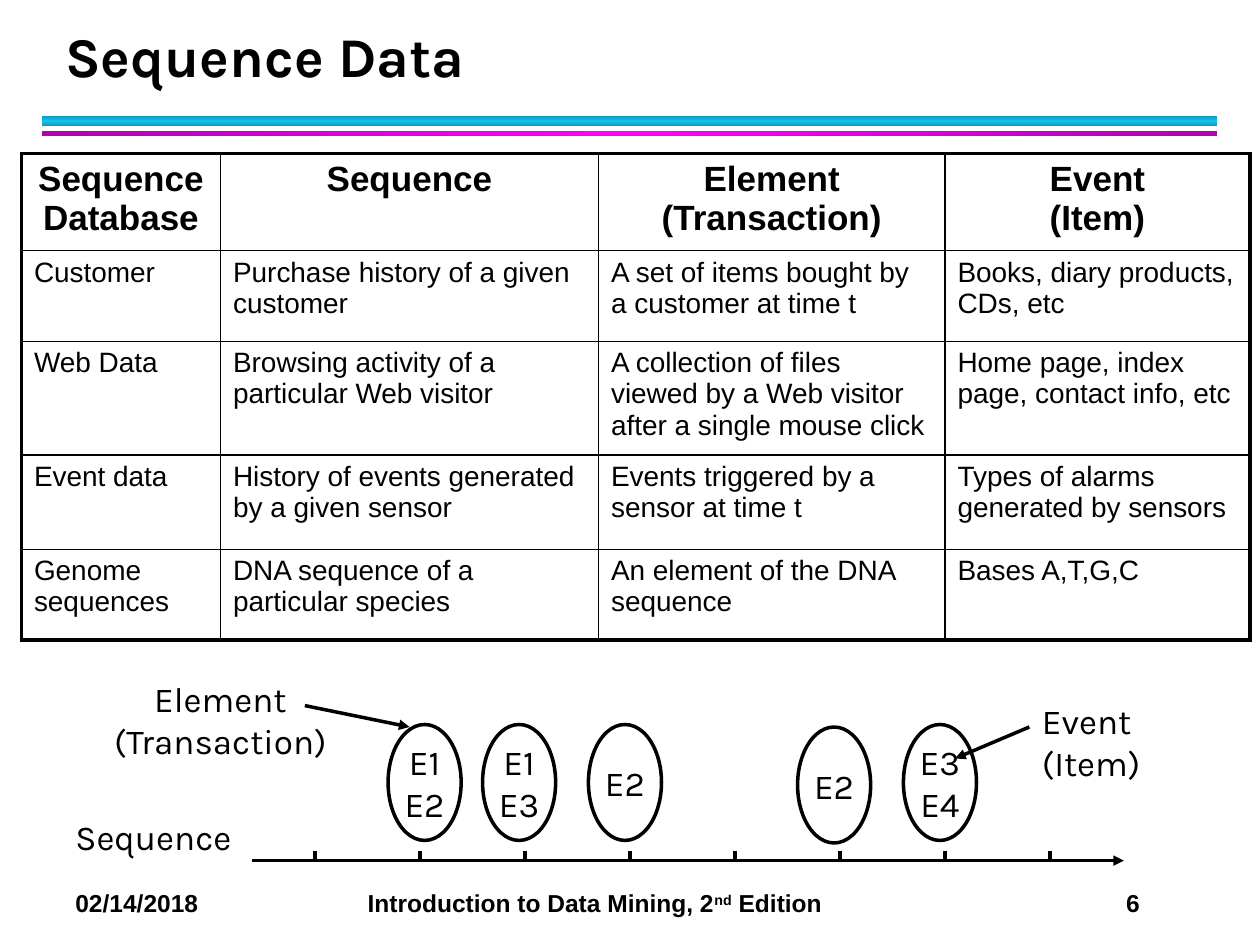
from copy import deepcopy

from lxml.etree import SubElement
from pptx import Presentation
from pptx.dml.color import RGBColor
from pptx.enum.shapes import MSO_CONNECTOR, MSO_SHAPE
from pptx.enum.text import MSO_ANCHOR, PP_ALIGN
from pptx.oxml.ns import qn
from pptx.util import Inches, Pt

BLACK = RGBColor(0x00, 0x00, 0x00)
DARK_CYAN = RGBColor(0x0E, 0x9B, 0xBA)
CYAN = RGBColor(0x12, 0xC2, 0xE9)
PURPLE = RGBColor(0xB2, 0x00, 0xB2)
MAGENTA = RGBColor(0xFF, 0x00, 0xFF)

COLUMN_WIDTHS = [1.58, 3, 2.75, 2.42]
ROW_HEIGHTS = [0.77, 0.72, 0.9, 0.75, 0.72]
TABLE_ROWS = [
    ["Sequence Database", "Sequence", "Element (Transaction)", "Event\n(Item)"],
    ["Customer", "Purchase history of a given customer",
     "A set of items bought by a customer at time t",
     "Books, diary products, CDs, etc"],
    ["Web Data", "Browsing activity of a particular Web visitor",
     "A collection of files viewed by a Web visitor after a single mouse click",
     "Home page, index page, contact info, etc"],
    ["Event data", "History of events generated by a given sensor",
     "Events triggered by a sensor at time t",
     "Types of alarms generated by sensors"],
    ["Genome sequences", "DNA sequence of a particular species",
     "An element of the DNA sequence", "Bases A,T,G,C"],
]
ELEMENTS = [
    (3.08, 5.75, "E1\nE2"),
    (3.83, 5.75, "E1\nE3"),
    (4.67, 5.75, "E2"),
    (7.17, 5.75, "E3\nE4"),
    (6.33, 5.77, "E2"),
]


def write_text(para, text, *, size=20, font="Karla", bold=False,
               align=PP_ALIGN.LEFT, baseline=0):
    para.alignment = align
    for index, line in enumerate(text.split("\n")):
        if index:
            para.add_line_break()
        span = para.add_run()
        span.text = line
        span.font.size = Pt(size)
        span.font.name = font
        span.font.bold = bold
        span.font.color.rgb = BLACK
        if baseline:
            span.font._element.set("baseline", str(baseline * 1000))


class SlideBuilder:
    line_width = 2
    outer_border = 2.25
    inner_border = 1

    def __init__(self, page):
        self.page = page

    def text_box(self, left, top, width, height, text="", **style):
        box = self.page.shapes.add_textbox(
            Inches(left), Inches(top), Inches(width), Inches(height))
        box.text_frame.word_wrap = True
        para = box.text_frame.paragraphs[0]
        if text:
            write_text(para, text, **style)
        return box.text_frame, para

    def bar(self, top, height, edge, middle, angle):
        bar = self.page.shapes.add_shape(
            MSO_SHAPE.RECTANGLE, Inches(0.33), Inches(top), Inches(9.33), Inches(height))
        bar.shadow.inherit = False
        bar.line.fill.background()
        bar.fill.gradient()
        bar.fill.gradient_angle = angle
        stop_list = bar._element.spPr.find(qn("a:gradFill")).find(qn("a:gsLst"))
        stop_list.append(deepcopy(stop_list[-1]))
        for stop, position, color in zip(
                bar.fill.gradient_stops, (0, 0.5, 1), (edge, middle, edge)):
            stop.position = position
            stop.color.rgb = color

    def line(self, start, end, arrow=False):
        points = [Inches(value) for value in (*start, *end)]
        line = self.page.shapes.add_connector(MSO_CONNECTOR.STRAIGHT, *points)
        line.line.color.rgb = BLACK
        line.line.width = Pt(self.line_width)
        if arrow:
            SubElement(line.line._get_or_add_ln(), qn("a:tailEnd"), type="triangle")
        SubElement(line._element.spPr, qn("a:effectLst"))

    def ellipse(self, left, top, text):
        oval = self.page.shapes.add_shape(
            MSO_SHAPE.OVAL, Inches(left), Inches(top), Inches(0.58), Inches(0.92))
        oval.shadow.inherit = False
        oval.fill.background()
        oval.line.color.rgb = BLACK
        oval.line.width = Pt(self.line_width)
        oval.text_frame.word_wrap = False
        oval.text_frame.vertical_anchor = MSO_ANCHOR.MIDDLE
        write_text(oval.text_frame.paragraphs[0], text, align=PP_ALIGN.CENTER)

    def border(self, cell, side, width):
        edge = SubElement(cell._tc.get_or_add_tcPr(), qn(f"a:ln{side}"), w=str(Pt(width)))
        SubElement(SubElement(edge, qn("a:solidFill")), qn("a:srgbClr"), val=str(BLACK))

    def table(self, left, top, rows, widths, heights):
        table = self.page.shapes.add_table(
            len(rows), len(widths), Inches(left), Inches(top),
            Inches(sum(widths)), Inches(sum(heights))).table
        table.first_row = False
        table.horz_banding = False
        for column, width in zip(table.columns, widths):
            column.width = Inches(width)
        for row, height in zip(table.rows, heights):
            row.height = Inches(height)
        for row_index, row in enumerate(rows):
            for column_index, text in enumerate(row):
                cell = table.cell(row_index, column_index)
                header = row_index == 0
                outer_sides = {
                    "L": column_index == 0,
                    "R": column_index == len(widths) - 1,
                    "T": header,
                    "B": row_index == len(rows) - 1,
                }
                for side, outer in outer_sides.items():
                    self.border(cell, side, self.outer_border if outer else self.inner_border)
                cell.fill.background()
                para = cell.text_frame.paragraphs[0]
                para.space_after = Pt(4)
                write_text(para, text, size=20 if header else 16, font="Arial", bold=header,
                           align=PP_ALIGN.CENTER if header else PP_ALIGN.LEFT)

    def footer(self, date, title, number):
        para = self.text_box(0.5, 7, 9.33, 0.34)[1]
        tab_list = SubElement(para._p.get_or_add_pPr(), qn("a:tabLst"))
        for position in (2.32, 8.34):
            SubElement(tab_list, qn("a:tab"), pos=str(Inches(position)), algn="l")
        before, ordinal, after = title
        style = {"size": 14, "font": "Arial", "bold": True}
        write_text(para, f"{date}\t{before}", **style)
        write_text(para, ordinal, baseline=30, **style)
        write_text(para, f"{after}\t{number}", **style)


def main():
    deck = Presentation()
    deck.slide_width = Inches(10)
    deck.slide_height = Inches(7.5)
    builder = SlideBuilder(deck.slides.add_slide(deck.slide_layouts[6]))

    builder.bar(0.92, 0.08, DARK_CYAN, CYAN, 90)
    builder.bar(1.04, 0.04, PURPLE, MAGENTA, 0)
    builder.footer("02/14/2018", ("Introduction to Data Mining, 2", "nd", " Edition"), "6")
    frame, para = builder.text_box(0.42, 0.17, 9.06, 0.58, "Sequence Data", size=32, bold=True)
    frame.vertical_anchor = MSO_ANCHOR.BOTTOM
    para.line_spacing = Pt(36)
    builder.table(0.17, 1.22, TABLE_ROWS, COLUMN_WIDTHS, ROW_HEIGHTS)

    builder.line((2, 6.83), (8.92, 6.83), arrow=True)
    builder.text_box(0.5, 6.42, 1.67, 0.43, "Sequence")
    for index in range(8):
        tick = 2.5 + index * 5 / 6
        builder.line((tick, 6.75), (tick, 6.83))
    for left, top, text in ELEMENTS:
        builder.ellipse(left, top, text)
    builder.line((2.42, 5.6), (3.25, 5.77), arrow=True)
    builder.text_box(0.75, 5.33, 2, 0.77, "Element (Transaction)", align=PP_ALIGN.CENTER)
    builder.line((8.17, 5.77), (7.58, 6.02), arrow=True)
    builder.text_box(8.17, 5.5, 1.08, 0.77, "Event\n(Item)")

    deck.save("out.pptx")


if __name__ == "__main__":
    main()
